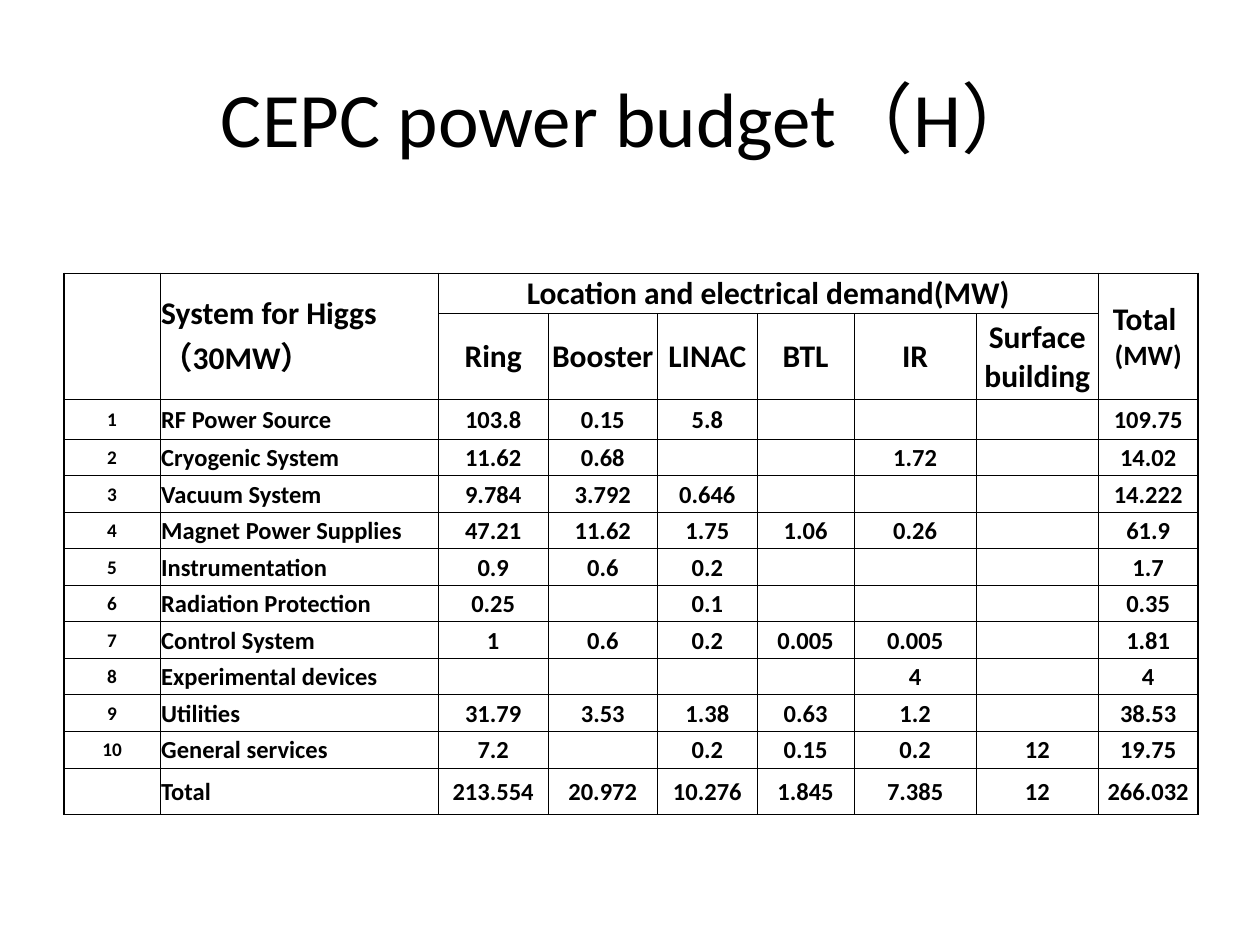
import pptx
import pptx.util
import pptx.dml.color
import pptx.enum.text
import pptx.oxml
import pptx.oxml.ns

Inches = pptx.util.Inches
Pt = pptx.util.Pt
BLACK = pptx.dml.color.RGBColor(0, 0, 0)
WHITE = pptx.dml.color.RGBColor(255, 255, 255)
MID = pptx.enum.text.MSO_ANCHOR.MIDDLE
LEFT = pptx.enum.text.PP_ALIGN.LEFT
MIDDLE = pptx.enum.text.PP_ALIGN.CENTER
LATIN, ASIAN = "Calibri", "Noto Sans CJK SC"
NS = pptx.oxml.ns.nsdecls("a")

WIDTHS = [0.76, 2.21, 0.87, 0.87, 0.79, 0.77, 0.97, 0.97, 0.79]
HEIGHTS = [0.32, 0.67, 0.32] + [0.29] * 9 + [0.37]
ROWS = [
    ["", "System for Higgs （30MW）", "Location and electrical demand(MW)",
     "", "", "", "", "", "Total  "],
    ["", "", "Ring", "Booster", "LINAC", "BTL", "IR", "Surface building", ""],
    ["1", "RF Power Source", "103.8", "0.15", "5.8", "", "", "", "109.75"],
    ["2", "Cryogenic System", "11.62", "0.68", "", "", "1.72", "", "14.02"],
    ["3", "Vacuum System", "9.784", "3.792", "0.646", "", "", "", "14.222"],
    ["4", "Magnet Power Supplies", "47.21", "11.62", "1.75", "1.06", "0.26", "", "61.9"],
    ["5", "Instrumentation", "0.9", "0.6", "0.2", "", "", "", "1.7"],
    ["6", "Radiation Protection", "0.25", "", "0.1", "", "", "", "0.35"],
    ["7", "Control System", "1", "0.6", "0.2", "0.005", "0.005", "", "1.81"],
    ["8", "Experimental devices", "", "", "", "", "4", "", "4"],
    ["9", "Utilities", "31.79", "3.53", "1.38", "0.63", "1.2", "", "38.53"],
    ["10", "General services", "7.2", "", "0.2", "0.15", "0.2", "12", "19.75"],
    ["", "Total", "213.554", "20.972", "10.276", "1.845", "7.385", "12", "266.032"],
]


def style(par, size, bold, align):
    par.alignment = align
    font = par.font
    font.name, font.size, font.bold = LATIN, Pt(size), bold
    font.color.rgb = BLACK
    par._p.pPr.defRPr.find(pptx.oxml.ns.qn("a:latin")).addnext(
        pptx.oxml.parse_xml(f'<a:ea {NS} typeface="{ASIAN}"/>'))


def edge(cell, side, width):
    cell._tc.get_or_add_tcPr().append(pptx.oxml.parse_xml(
        f'<a:ln{side} {NS} w="{Pt(width)}"><a:solidFill>'
        f'<a:srgbClr val="{BLACK}"/></a:solidFill></a:ln{side}>'))


deck = pptx.Presentation()
deck.slide_width, deck.slide_height = Inches(10), Inches(7.5)
slide = deck.slides.add_slide(deck.slide_layouts[5])

title = slide.shapes.title
title.left, title.top = Inches(0.5), Inches(0.3)
title.width, title.height = Inches(9), Inches(1.25)
title.text_frame.text = "CEPC power budget（H）"
title.text_frame.vertical_anchor = MID
style(title.text_frame.paragraphs[0], 44, False, MIDDLE)

last, end = len(ROWS) - 1, len(WIDTHS) - 1
table = slide.shapes.add_table(
    len(ROWS), len(WIDTHS), Inches(0.51), Inches(2.17),
    Inches(sum(WIDTHS)), Inches(sum(HEIGHTS))).table
table.first_row = table.horz_banding = False
for col, width in zip(table.columns, WIDTHS):
    col.width = Inches(width)
for row, height in zip(table.rows, HEIGHTS):
    row.height = Inches(height)

for r, row in enumerate(ROWS):
    for c, text in enumerate(row):
        cell = table.cell(r, c)
        cell.margin_left = cell.margin_right = cell.margin_top = Inches(0.01)
        cell.margin_bottom = 0
        cell.vertical_anchor = MID
        edge(cell, "L", 1 if c == 0 else 0.5)
        edge(cell, "R", 1 if c == end else 0.5)
        edge(cell, "T", 1 if r == 0 else 0.5)
        edge(cell, "B", 1 if r == last else 0.5)
        cell.fill.background()
        par = cell.text_frame.paragraphs[0]
        if text:
            par.add_run().text = text
        size = 18 if r < 2 and text else 11 if c == 0 else 14
        style(par, size, True, LEFT if c == 1 else MIDDLE)

system = table.cell(0, 1)
system.fill.solid()
system.fill.fore_color.rgb = WHITE
unit = table.cell(0, end).text_frame.paragraphs[0].add_run()
unit.text = "(MW)"
unit.font.size = Pt(16)

for c in (0, 1, end):
    table.cell(0, c).merge(table.cell(1, c))
table.cell(0, 2).merge(table.cell(0, end - 1))

deck.save("out.pptx")
